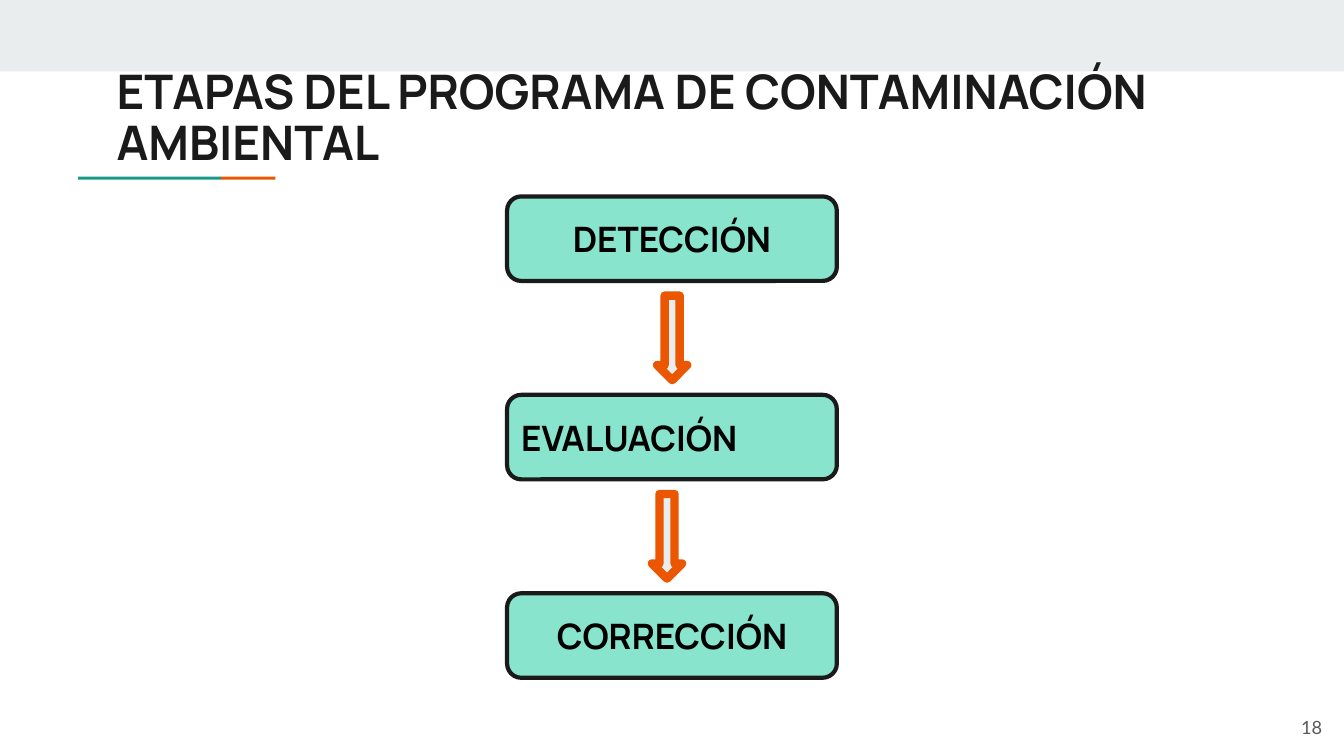
from lxml import etree
from pptx import Presentation
from pptx.dml.color import RGBColor
from pptx.enum import shapes, text
from pptx.oxml import ns
from pptx.util import Cm, Pt

INK, MINT, TEAL = "1A1A1A", "89E4CD", "1A9988"
ORANGE, PALE, GREY = "EB5600", "E9EDEE", "595959"
KIND = shapes.MSO_SHAPE
SIDE = text.PP_ALIGN


def tint(fmt, code):
    fmt.rgb = RGBColor.from_string(code)


def write(shape, words, size, font, code, side, bold, pad, lead=None):
    """Fill a shape with one paragraph, centred vertically."""
    frame = shape.text_frame
    frame.word_wrap = True
    frame.vertical_anchor = text.MSO_ANCHOR.MIDDLE
    frame.margin_left = frame.margin_right = Cm(pad[0])
    frame.margin_top = frame.margin_bottom = Cm(pad[1])
    para = frame.paragraphs[0]
    para.alignment = side
    para.line_spacing = lead
    run = para.add_run()
    run.text = words
    run.font.size = Pt(size)
    run.font.name = font
    run.font.bold = bold
    tint(run.font.color, code)


def label(slide, at, *style, **more):
    box = slide.shapes.add_textbox(*map(Cm, at))
    write(box, *style, **more)


def block(slide, kind, at, fill, edge=None, width=0):
    """Draw a preset shape with an optional round-joined outline."""
    shape = slide.shapes.add_shape(kind, *map(Cm, at))
    shape.shadow.inherit = False
    shape.fill.solid()
    tint(shape.fill.fore_color, fill)
    if edge:
        shape.line.width = Pt(width)
        shape.line.fill.solid()
        tint(shape.line.color, edge)
        line = shape.line._get_or_add_ln()
        etree.SubElement(line, ns.qn("a:round"))
    else:
        shape.line.fill.background()
    return shape


def stage(slide, top, words, side):
    box = block(slide, KIND.ROUNDED_RECTANGLE, (12.78, top, 8.31, 2.13),
                MINT, INK, 3)
    write(box, words, 25, "Manrope", "000000", side, True, (0.25, 0.25))


def arrow(slide, left, top):
    block(slide, KIND.DOWN_ARROW, (left, top, 0.76, 2.13), PALE, ORANGE, 6)


def main():
    deck = Presentation()
    deck.slide_width, deck.slide_height = Cm(33.87), Cm(19.05)
    slide = deck.slides.add_slide(deck.slide_layouts[6])

    # Top band and two-colour rule
    block(slide, KIND.RECTANGLE, (0, 0, 33.87, 1.8), PALE)
    block(slide, KIND.RECTANGLE, (5.57, 4.45, 1.37, 0.08), ORANGE)
    block(slide, KIND.RECTANGLE, (1.97, 4.45, 3.6, 0.08), TEAL)

    # Title and page number
    label(slide, (2.69, 2.03, 28.47, 1.98),
          "ETAPAS DEL PROGRAMA DE CONTAMINACIÓN AMBIENTAL",
          34, "Manrope", INK, SIDE.LEFT, True, (0.25, 0.13), lead=0.9)
    label(slide, (31.62, 17.6, 2.03, 1.45), "18",
          13, "Lato", GREY, SIDE.RIGHT, False, (0.33, 0.33))

    # Stages, evenly stepped, with arrows between them
    first, step = 4.95, 5.0
    stages = (("DETECCIÓN", SIDE.CENTER), ("EVALUACIÓN", SIDE.LEFT),
              ("CORRECCIÓN", SIDE.CENTER))
    for i, (words, side) in enumerate(stages):
        stage(slide, first + i * step, words, side)
    for i, left in enumerate((16.56, 16.43)):
        arrow(slide, left, first + i * step + step / 2)

    deck.save("out.pptx")


if __name__ == "__main__":
    main()
